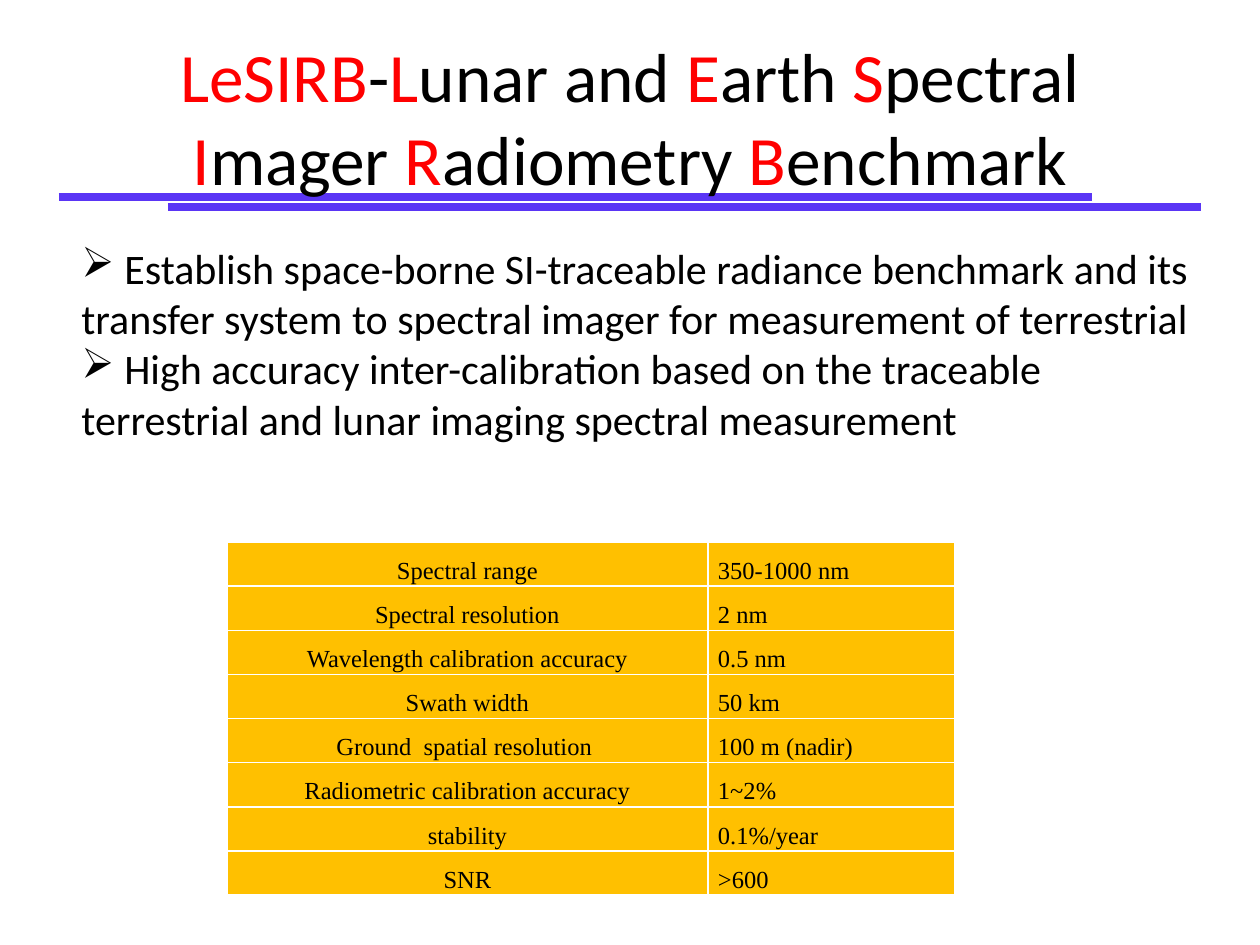
"""Build the LeSIRB overview slide with its title, goals and specification table."""
from lxml.etree import SubElement
from pptx import Presentation
from pptx.dml.color import RGBColor
from pptx.enum.shapes import MSO_CONNECTOR as Connector
from pptx.enum.text import MSO_ANCHOR as Anchor, PP_ALIGN as Align
from pptx.oxml.ns import qn
from pptx.util import Pt

EMU_PER_PX = 914400 / 126
BLACK = RGBColor(0x00, 0x00, 0x00)
WHITE = RGBColor(0xFF, 0xFF, 0xFF)
RED = RGBColor(0xFF, 0x00, 0x00)
VIOLET = RGBColor(0x5A, 0x35, 0xF5)
AMBER = RGBColor(0xFF, 0xC0, 0x00)

TITLE_RUNS = ["LeSIRB", "-", "L", "unar and ", "E", "arth ", "S", "pectral ",
              "I", "mager ", "R", "adiometry ", "B", "enchmark"]
GOALS = [
    " Establish space-borne SI-traceable radiance benchmark and its transfer system"
    " to spectral imager for measurement of terrestrial",
    " High accuracy inter-calibration based on the traceable terrestrial and lunar"
    " imaging spectral measurement",
]
SPECIFICATIONS = [
    ("Spectral range", "350-1000 nm"),
    ("Spectral resolution", "2 nm"),
    ("Wavelength calibration accuracy", "0.5 nm"),
    ("Swath width", "50 km"),
    ("Ground  spatial resolution ", "100 m (nadir)"),
    ("Radiometric calibration accuracy", "1~2%"),
    ("stability", "0.1%/year"),
    ("SNR", ">600"),
]


def px(length):
    return round(length * EMU_PER_PX)


def apply_format(target, values):
    for name, value in values.items():
        setattr(target, name, value)


class SlideBuilder:
    title_font = {"name": "Calibri", "size": Pt(39.6)}
    body_font = {"name": "Calibri", "size": Pt(24)}
    table_font = {"name": "Times New Roman", "size": Pt(14)}
    cell_format = {"vertical_anchor": Anchor.MIDDLE, "margin_left": px(10),
                   "margin_right": px(10), "margin_top": 0, "margin_bottom": 0}

    def __init__(self, slide):
        self.slide = slide

    def rule(self, left, right, y):
        line = self.slide.shapes.add_connector(
            Connector.STRAIGHT, px(left), px(y), px(right), px(y))
        line.line.color.rgb = VIOLET
        line.line.width = Pt(4.5)
        SubElement(line._element.spPr, qn("a:effectLst"))

    def text_frame(self, box, anchor):
        frame = self.slide.shapes.add_textbox(*map(px, box)).text_frame
        apply_format(frame, {"word_wrap": True, "vertical_anchor": anchor})
        return frame

    def run(self, paragraph, text, font, color=BLACK):
        run = paragraph.add_run()
        run.text = text
        apply_format(run.font, font)
        run.font.color.rgb = color

    def title(self, box, runs):
        paragraph = self.text_frame(box, Anchor.MIDDLE).paragraphs[0]
        paragraph.alignment = Align.CENTER
        for index, text in enumerate(runs):
            self.run(paragraph, text, self.title_font, BLACK if index % 2 else RED)

    def bullets(self, box, items):
        frame = self.text_frame(box, Anchor.TOP)
        for index, text in enumerate(items):
            paragraph = frame.add_paragraph() if index else frame.paragraphs[0]
            properties = paragraph._p.get_or_add_pPr()
            SubElement(properties, qn("a:buChar")).set("char", "➢")
            self.run(paragraph, text, self.body_font)

    def border(self, cell):
        properties = cell._tc.get_or_add_tcPr()
        for position, side in enumerate(("lnL", "lnR", "lnT", "lnB")):
            line = properties.makeelement(qn(f"a:{side}"), {"w": str(Pt(1))})
            fill = SubElement(line, qn("a:solidFill"))
            SubElement(fill, qn("a:srgbClr")).set("val", str(WHITE))
            properties.insert(position, line)

    def table(self, left, top, column_widths, row_height, rows):
        box = (left, top, sum(column_widths), row_height * len(rows))
        table = self.slide.shapes.add_table(
            len(rows), len(column_widths), *map(px, box)).table
        for column, width in zip(table.columns, column_widths):
            column.width = px(width)
        for row_index, row in enumerate(rows):
            table.rows[row_index].height = px(row_height)
            for column_index, text in enumerate(row):
                cell = table.cell(row_index, column_index)
                apply_format(cell, self.cell_format)
                cell.fill.solid()
                cell.fill.fore_color.rgb = AMBER
                self.border(cell)
                paragraph = cell.text_frame.paragraphs[0]
                alignment = Align.JUSTIFY if column_index else Align.CENTER
                apply_format(paragraph, {"alignment": alignment, "line_spacing": 1.5})
                self.run(paragraph, text, self.table_font)


def main():
    presentation = Presentation()
    presentation.slide_width, presentation.slide_height = px(1260), px(945)
    builder = SlideBuilder(presentation.slides.add_slide(presentation.slide_layouts[6]))
    builder.rule(59, 1092, 197)
    builder.rule(168, 1201, 207)
    builder.title((63, 38, 1134, 157), TITLE_RUNS)
    builder.bullets((69, 236, 1152, 217), GOALS)
    builder.table(227, 542, (481, 247), 44, SPECIFICATIONS)
    presentation.save("out.pptx")


if __name__ == "__main__":
    main()
